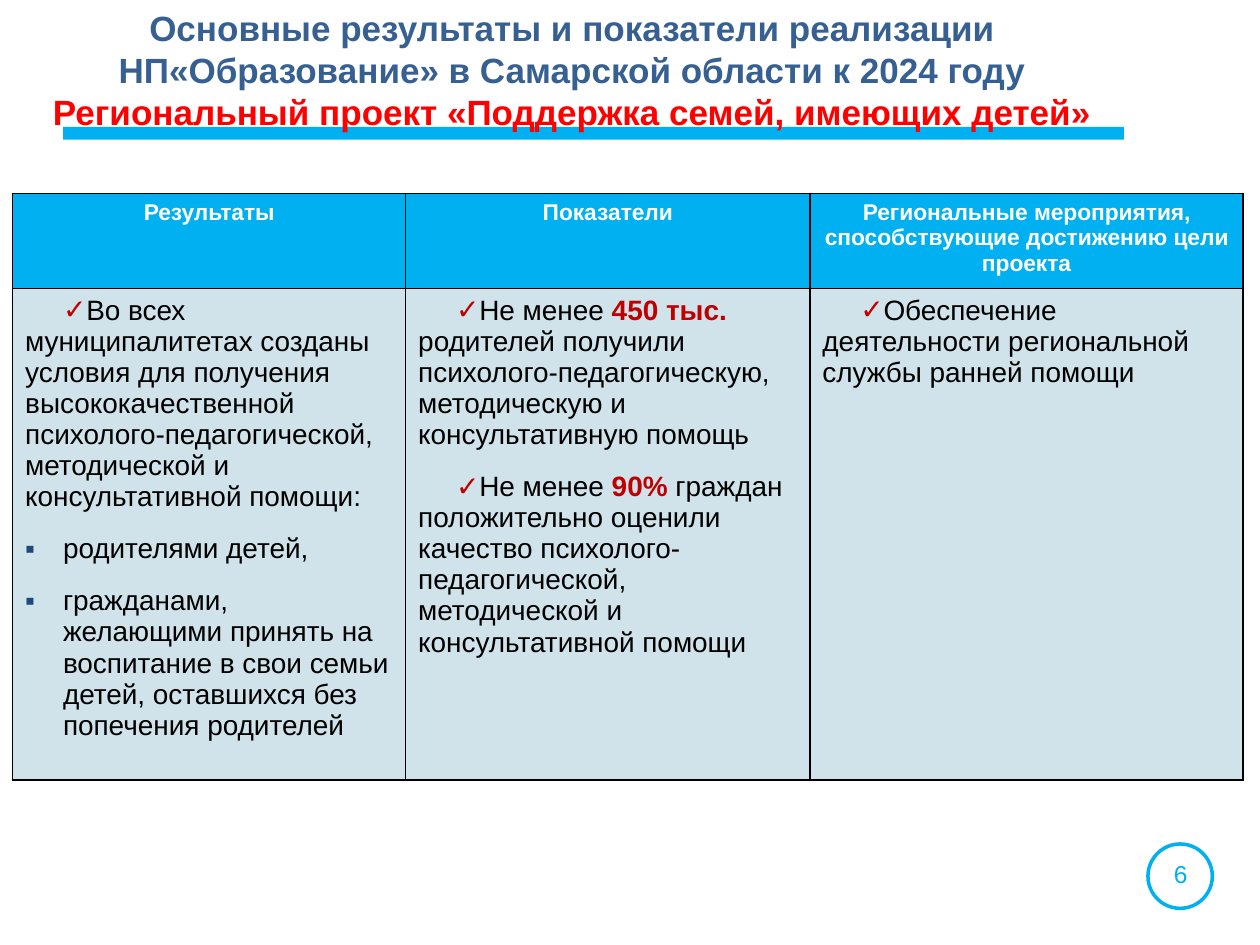
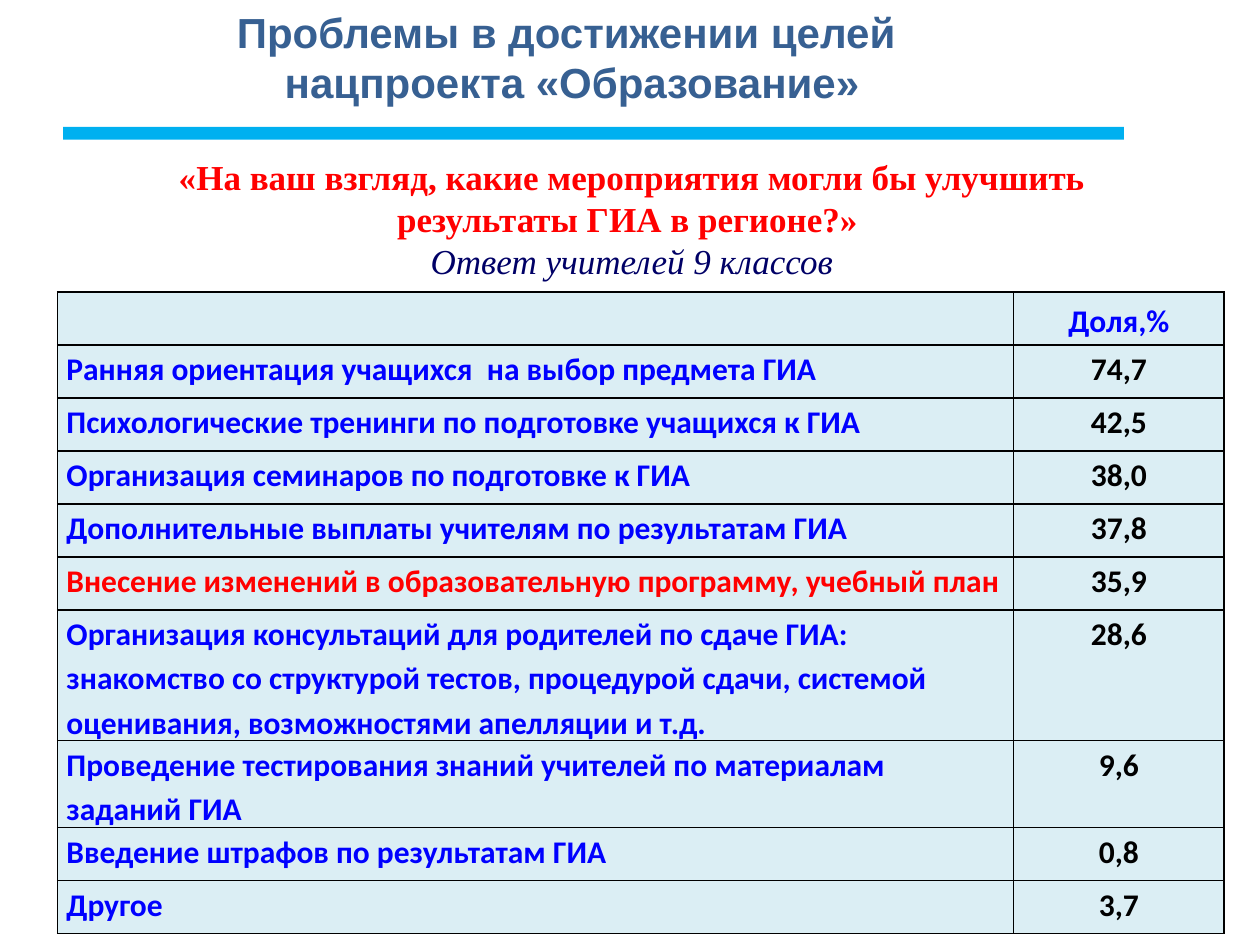
from lxml import etree
from pptx import Presentation
from pptx.dml.color import RGBColor
from pptx.enum.shapes import MSO_SHAPE as Shape
from pptx.enum.text import MSO_ANCHOR as Anchor, PP_ALIGN as Align
from pptx.oxml.ns import qn
from pptx.util import Pt

COLOURS = {
    "accent": "00B0F0", "title": "376092", "red": "FF0000", "white": "FFFFFF",
    "black": "000000", "check": "C00000", "square": "1F497D", "body": "D0E3EA",
    "survey": "DBEEF4", "blue": "0000FF", "navy": "000066",
}
CHECK = dict(bullet="✓", bullet_colour="check", indent=21.6, before=12)
SQUARE = dict(bullet="▪", bullet_colour="square", left=21.6, indent=-21.6, before=12)

RESULTS = [
    [("Во всех муниципалитетах созданы условия для получения высококачественной "
      "психолого-педагогической, методической и консультативной помощи:", CHECK),
     ("родителями детей,", SQUARE),
     ("гражданами, желающими принять на воспитание в свои семьи детей, "
      "оставшихся без попечения родителей", SQUARE)],
    [(["Не менее ", "450 тыс. ", "родителей получили психолого-педагогическую, "
       "методическую и консультативную помощь"], CHECK),
     (["Не менее ", "90% ", "граждан положительно оценили качество "
       "психолого-педагогической, методической и консультативной помощи"], CHECK)],
    [("Обеспечение деятельности региональной службы ранней помощи", CHECK)],
]
RESULT_HEADERS = ["Результаты", "Показатели",
                  "Региональные мероприятия, способствующие достижению цели проекта"]
CURRICULUM = "Внесение изменений в образовательную программу, учебный план"
SURVEY = [
    ("Ранняя ориентация учащихся  на выбор предмета ГИА", "74,7"),
    ("Психологические тренинги по подготовке учащихся к ГИА", "42,5"),
    ("Организация семинаров по подготовке к ГИА", "38,0"),
    ("Дополнительные выплаты учителям по результатам ГИА", "37,8"),
    (CURRICULUM, "35,9"),
    ("Организация консультаций для родителей по сдаче ГИА:\vзнакомство со структурой "
     "тестов, процедурой сдачи, системой оценивания, возможностями апелляции и т.д.", "28,6"),
    ("Проведение тестирования знаний учителей по материалам заданий ГИА", "9,6"),
    ("Введение штрафов по результатам ГИА", "0,8"),
    ("Другое", "3,7"),
]


def rgb(name):
    return RGBColor.from_string(COLOURS[name])


def add_bullet(para, char, colour, left, indent):
    props = para._p.get_or_add_pPr()
    props.set("marL", str(Pt(left)))
    props.set("indent", str(Pt(indent)))
    bullet_colour = etree.SubElement(props, qn("a:buClr"))
    etree.SubElement(bullet_colour, qn("a:srgbClr"), val=COLOURS[colour])
    etree.SubElement(props, qn("a:buFont"), typeface="Arial")
    etree.SubElement(props, qn("a:buChar"), char=char)


def write(frame, text, size=16, font="Arial", colour="black", bold=False, italic=False,
          align=None, bullet=None, bullet_colour=None, left=0, indent=0,
          before=None, after=None, spacing=None):
    """Add a paragraph; in a list of spans every second one is emphasised."""
    first = not frame.paragraphs[0].runs
    para = frame.paragraphs[0] if first else frame.add_paragraph()
    if bullet:
        add_bullet(para, bullet, bullet_colour, left, indent)
    para.alignment = align
    para.line_spacing = spacing
    if before and not first:
        para.space_before = Pt(before)
    if after:
        para.space_after = Pt(after)
    for number, content in enumerate([text] if isinstance(text, str) else text):
        strong = number % 2 == 1
        for line_number, line in enumerate(content.split("\v")):
            if line_number:
                para.add_line_break()
            span = para.add_run()
            span.text = line
            span.font.size, span.font.name = Pt(size), font
            span.font.bold, span.font.italic = bold or strong, italic
            span.font.color.rgb = rgb("check" if strong else colour)


def add_box(page, left, top, width, height, anchor=Anchor.TOP):
    box = page.shapes.add_textbox(Pt(left), Pt(top), Pt(width), Pt(height))
    box.text_frame.word_wrap = True
    box.text_frame.vertical_anchor = anchor
    return box.text_frame


def add_title(page, lines, size, height):
    """Write (text, colour) lines over the blue band."""
    frame = add_box(page, 0, 0, 653.8, height)
    for text, colour in lines:
        write(frame, text, size=size, colour=colour, bold=True, align=Align.CENTER)


def add_page(deck):
    page = deck.slides.add_slide(deck.slide_layouts[6])
    band = page.shapes.add_shape(Shape.RECTANGLE, Pt(36), Pt(72.6), Pt(606.2), Pt(7.2))
    band.shadow.inherit = False
    band.fill.solid()
    band.fill.fore_color.rgb = rgb("accent")
    band.line.fill.background()
    return page


def add_page_number(page, number):
    ring = page.shapes.add_shape(Shape.OVAL, Pt(656), Pt(482.3), Pt(36.8), Pt(36.8))
    ring.shadow.inherit = False
    ring.fill.background()
    ring.line.color.rgb = rgb("accent")
    ring.line.width = Pt(2)
    frame = add_box(page, 653.8, 487.4, 41.8, 24.5)
    write(frame, number, size=14, colour="accent", align=Align.CENTER)


def style_cell(cell, fill):
    props = cell._tc.get_or_add_tcPr()
    for side in ("lnL", "lnR", "lnT", "lnB"):
        border = etree.SubElement(props, qn(f"a:{side}"), w=str(Pt(1)))
        paint = etree.SubElement(border, qn("a:solidFill"))
        etree.SubElement(paint, qn("a:srgbClr"), val=COLOURS["black"])
    cell.fill.solid()
    cell.fill.fore_color.rgb = rgb(fill)


def add_grid(page, left, top, widths, heights, fill, header_fill):
    table = page.shapes.add_table(len(heights), len(widths), Pt(left), Pt(top),
                                  Pt(sum(widths)), Pt(sum(heights))).table
    table.horz_banding = False
    for column, width in zip(table.columns, widths):
        column.width = Pt(width)
    for number, (row, height) in enumerate(zip(table.rows, heights)):
        row.height = Pt(height)
        for cell in row.cells:
            style_cell(cell, fill if number else header_fill)
    return table


def build_results_page(deck):
    page = add_page(deck)
    add_page_number(page, "6")
    table = add_grid(page, 7.2, 110.7, [224.6, 231, 247.6], [54.2, 280.8], "body", "accent")
    for column, (header, items) in enumerate(zip(RESULT_HEADERS, RESULTS)):
        write(table.cell(0, column).text_frame, header, size=13, colour="white",
              bold=True, align=Align.CENTER)
        for text, style in items:
            write(table.cell(1, column).text_frame, text, **style)
    add_title(page, [
        ("Основные результаты и показатели реализации НП«Образование» "
         "в Самарской области к 2024 году", "title"),
        ("Региональный проект «Поддержка семей, имеющих детей»", "red")], 20, 77)


def build_survey_page(deck):
    page = add_page(deck)
    add_title(page, [("Проблемы в достижении целей ", "title"),
                     ("нацпроекта «Образование»", "title")], 24, 66.2)
    heights = [30.3] * 6 + [74.3, 49.7] + [30.3] * 2
    table = add_grid(page, 33, 166.9, [546.2, 120.4], heights, "survey", "survey")
    for cell in table.iter_cells():
        cell.margin_left = cell.margin_right = Pt(5)
        cell.margin_top = cell.margin_bottom = 0
    style = dict(size=18, font="Calibri", bold=True, spacing=1.15, after=10)
    share = table.cell(0, 1)
    share.vertical_anchor = Anchor.MIDDLE
    write(share.text_frame, "Доля,%", colour="blue", align=Align.CENTER, **style)
    for row, (measure, percent) in enumerate(SURVEY, start=1):
        colour = "red" if measure == CURRICULUM else "blue"
        write(table.cell(row, 0).text_frame, measure, colour=colour, **style)
        write(table.cell(row, 1).text_frame, percent, align=Align.CENTER, **style)

    question = add_box(page, 31, 85, 660.2, 80, anchor=Anchor.MIDDLE)
    serif = dict(size=20, font="Times New Roman", align=Align.CENTER)
    for line in (" «На ваш взгляд, какие мероприятия могли бы улучшить ",
                 "результаты ГИА в регионе?» "):
        write(question, line, colour="red", bold=True, **serif)
    write(question, "Ответ учителей 9 классов", colour="navy", italic=True, **serif)


def main():
    deck = Presentation()
    deck.slide_width, deck.slide_height = Pt(720), Pt(540)
    build_results_page(deck)
    build_survey_page(deck)
    deck.save("out.pptx")


if __name__ == "__main__":
    main()
